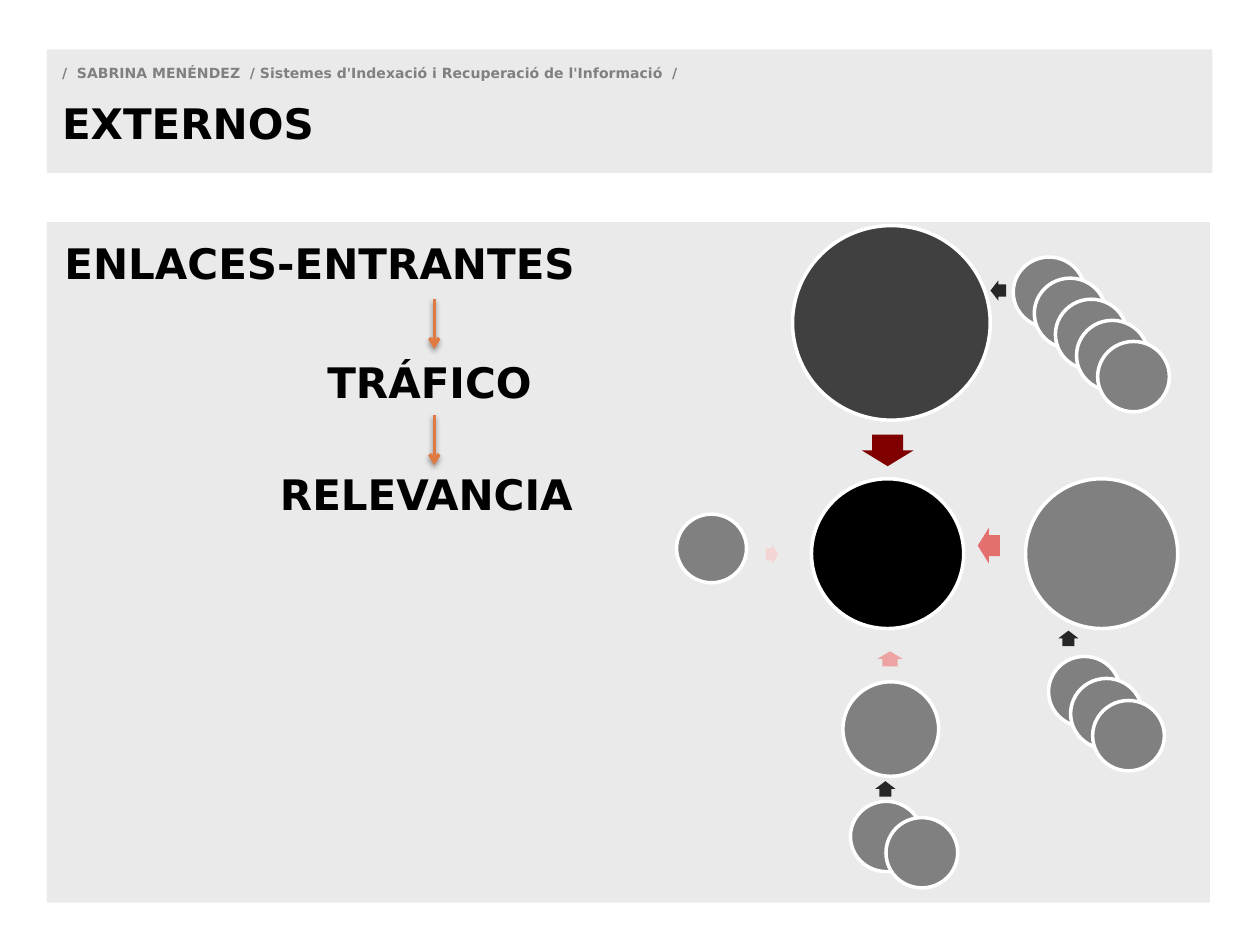
from dataclasses import dataclass

from lxml import etree
from pptx import Presentation
from pptx.dml.color import RGBColor
from pptx.enum.shapes import MSO_CONNECTOR, MSO_SHAPE
from pptx.enum.text import MSO_ANCHOR, MSO_AUTO_SIZE, PP_ALIGN
from pptx.oxml import parse_xml
from pptx.oxml.ns import nsdecls, qn
from pptx.util import Pt

RECT, OVAL = MSO_SHAPE.RECTANGLE, MSO_SHAPE.OVAL
UP, DOWN = MSO_SHAPE.UP_ARROW, MSO_SHAPE.DOWN_ARROW
LEFT, RIGHT = MSO_SHAPE.LEFT_ARROW, MSO_SHAPE.RIGHT_ARROW
ALIGN_LEFT, JUSTIFY = PP_ALIGN.LEFT, PP_ALIGN.JUSTIFY
TOP, NO_FIT = MSO_ANCHOR.TOP, MSO_AUTO_SIZE.NONE

FONT = "DejaVu Sans"
PANEL, GREY, BLACK, WHITE = "EAEAEA", "808080", "000000", "FFFFFF"
CHARCOAL, DARK, ORANGE = "404040", "262626", "E07A43"
INSET = 8.64
SMALL_W, SMALL_H = 41, 40.2


@dataclass
class Item:
    kind: int
    x: float
    y: float
    w: float
    h: float
    color: str = GREY


@dataclass
class Stack:
    x: float
    y: float
    dx: float
    dy: float
    count: int


NODES = [
    Item(OVAL, 463.7, 273.6, 87, 85.6, BLACK),
    Item(OVAL, 452.9, 128.9, 113, 111.2, CHARCOAL),
    Item(OVAL, 386.6, 293.8, 40, 39.2),
    Item(OVAL, 481.7, 389.6, 54.7, 54),
    Item(OVAL, 586, 273.6, 87, 85.6),
]
ARROWS = [
    Item(UP, 501.4, 372.2, 14.4, 8.6, "ECA3A2"),
    Item(LEFT, 558.7, 301.7, 12.6, 20.2, "E36F6E"),
    Item(DOWN, 492.5, 248.4, 29.5, 18, "800000"),
    Item(RIGHT, 437.6, 311, 7.2, 11.5, "F5D4D4"),
    Item(LEFT, 566, 160.3, 9, 11.5, DARK),
    Item(UP, 604.8, 360.4, 11.5, 8.8, DARK),
    Item(UP, 500.2, 446.4, 11.5, 8.8, DARK),
]
STACKS = [
    Stack(579, 146.9, 12.06, 12.06, 5),
    Stack(599.2, 375.1, 12.6, 12.6, 3),
    Stack(486, 457.9, 20.3, 9.3, 2),
]


def rgb(value: str) -> RGBColor:
    return RGBColor.from_string(value)


def add_text(p, text: str, size: float = 24, color: str = BLACK,
             align=ALIGN_LEFT, before: float = 0) -> None:
    p.alignment = align
    p.space_before = Pt(before)
    r = p.add_run()
    r.text = text
    r.font.name = FONT
    r.font.size = Pt(size)
    r.font.bold = True
    r.font.color.rgb = rgb(color)


def place(sp, x: float, y: float, w: float, h: float) -> None:
    sp.left, sp.top, sp.width, sp.height = Pt(x), Pt(y), Pt(w), Pt(h)


def format_panel(sp):
    sp.fill.solid()
    sp.fill.fore_color.rgb = rgb(PANEL)
    sp.line.fill.background()
    tf = sp.text_frame
    tf.auto_size = NO_FIT
    tf.word_wrap = True
    tf.vertical_anchor = TOP
    tf.margin_left = tf.margin_right = Pt(INSET)
    tf.margin_top = tf.margin_bottom = Pt(INSET)
    return tf


def add_item(slide, item: Item):
    sp = slide.shapes.add_shape(item.kind, Pt(item.x), Pt(item.y), Pt(item.w), Pt(item.h))
    sp.shadow.inherit = False
    sp.fill.solid()
    sp.fill.fore_color.rgb = rgb(item.color)
    if item.kind == OVAL:
        sp.line.color.rgb = rgb(WHITE)
        sp.line.width = Pt(2)
    else:
        sp.line.fill.background()
    return sp


def add_arrow(slide, item: Item) -> None:
    sp = add_item(slide, item)
    sp.adjustments[0] = 0.6
    sp.adjustments[1] = 0.5


def add_stack(slide, stack: Stack) -> None:
    for i in range(stack.count):
        add_item(slide, Item(OVAL, stack.x + i * stack.dx, stack.y + i * stack.dy,
                             SMALL_W, SMALL_H))


def add_label(slide, text: str, x: float, y: float, w: float) -> None:
    tf = slide.shapes.add_textbox(Pt(x), Pt(y), Pt(w), Pt(36)).text_frame
    tf.word_wrap = False
    add_text(tf.paragraphs[0], text, align=JUSTIFY)


def add_link(slide, x: float, y: float, length: float) -> None:
    cn = slide.shapes.add_connector(MSO_CONNECTOR.STRAIGHT, Pt(x), Pt(y), Pt(x), Pt(y + length))
    cn.line.color.rgb = rgb(ORANGE)
    cn.line.width = Pt(2)
    etree.SubElement(cn.line._get_or_add_ln(), qn("a:tailEnd"), type="arrow")
    cn._element.spPr.append(parse_xml(
        f'<a:effectLst {nsdecls("a")}>'
        f'<a:outerShdw blurRad="{Pt(3.1)}" dist="{Pt(1.6)}" dir="5400000" rotWithShape="0">'
        f'<a:srgbClr val="{BLACK}"><a:alpha val="38000"/></a:srgbClr>'
        '</a:outerShdw></a:effectLst>'))


def main() -> None:
    prs = Presentation()
    prs.slide_width, prs.slide_height = Pt(720), Pt(540)
    slide = prs.slides.add_slide(prs.slide_layouts[5])

    title = slide.shapes.title
    place(title, 26.8, 28.2, 666, 70.6)
    tf = format_panel(title)
    add_text(tf.paragraphs[0],
             "/  SABRINA MENÉNDEZ  / Sistemes d'Indexació i Recuperació de l'Informació  /",
             size=8, color=GREY)
    add_text(tf.add_paragraph(), "EXTERNOS", before=9.3)

    body = add_item(slide, Item(RECT, 26.8, 127, 664.6, 388.8, PANEL))
    tf = format_panel(body)
    tf.margin_left = Pt(INSET + 1.4)
    add_text(tf.paragraphs[0], "ENLACES-ENTRANTES")

    add_label(slide, "TRÁFICO", 180, 200.2, 136)
    add_label(slide, "RELEVANCIA", 152.9, 264.2, 190)
    for y in (170.6, 237):
        add_link(slide, 248.2, y, 28.8)

    for node in NODES:
        add_item(slide, node)
    for arrow in ARROWS:
        add_arrow(slide, arrow)
    for stack in STACKS:
        add_stack(slide, stack)

    prs.save("out.pptx")


if __name__ == "__main__":
    main()
